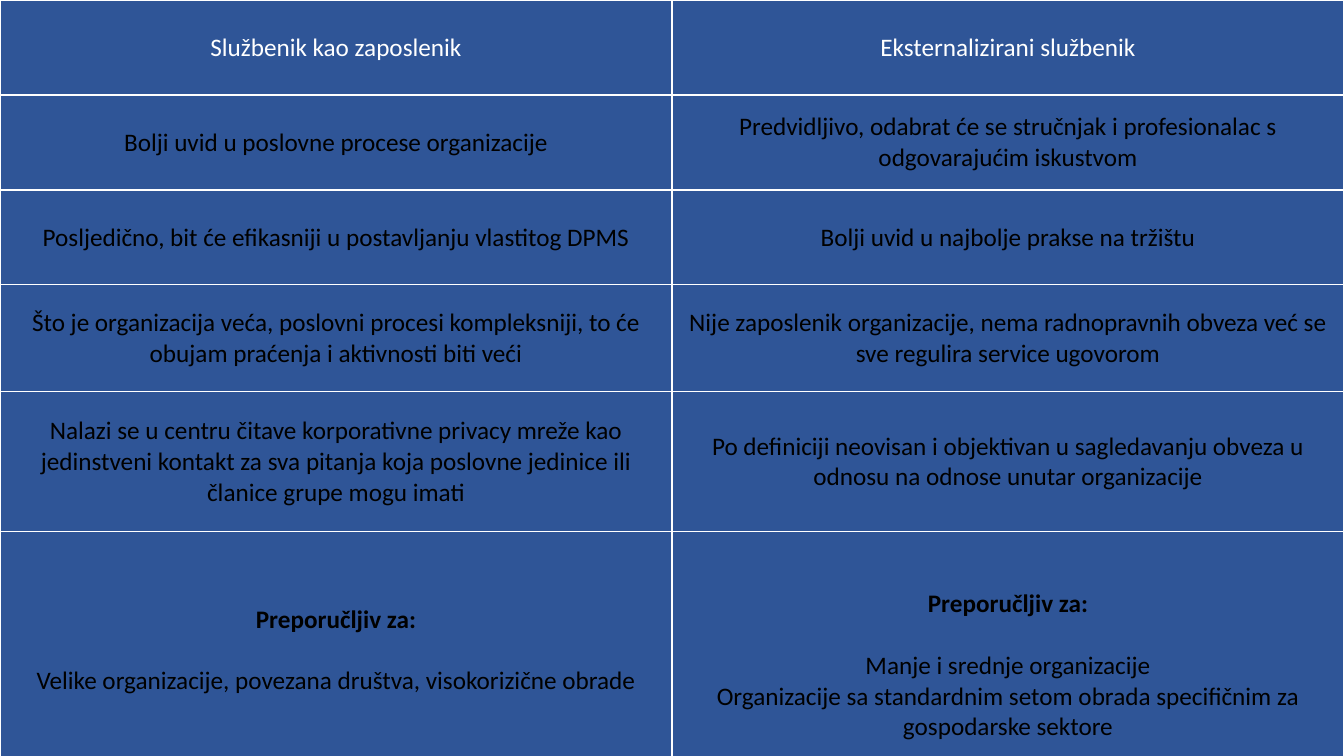
from lxml.etree import SubElement
from pptx import Presentation
from pptx.dml.color import RGBColor
from pptx.enum.text import MSO_ANCHOR, PP_ALIGN
from pptx.oxml.ns import qn
from pptx.util import Emu, Pt

SLIDE_SIZE = (1344, 756)
COLUMN_WIDTH = 672
ROW_HEIGHTS = [95, 95, 95, 107, 140, 237]
RECOMMENDED = "Preporučljiv za:"
COMPARISON = [
    (["Službenik kao zaposlenik"], ["Eksternalizirani službenik"]),
    (["Bolji uvid u poslovne procese organizacije"],
     ["Predvidljivo, odabrat će se stručnjak i profesionalac s odgovarajućim iskustvom"]),
    (["Posljedično, bit će efikasniji u postavljanju vlastitog DPMS"],
     ["Bolji uvid u najbolje prakse na tržištu"]),
    (["Što je organizacija veća, poslovni procesi kompleksniji, to će obujam praćenja i aktivnosti biti veći"],
     ["Nije zaposlenik organizacije, nema radnopravnih obveza već se sve regulira service ugovorom"]),
    (["Nalazi se u centru čitave korporativne privacy mreže kao jedinstveni kontakt za sva pitanja "
      "koja poslovne jedinice ili članice grupe mogu imati"],
     ["Po definiciji neovisan i objektivan u sagledavanju obveza u odnosu na odnose unutar organizacije"]),
    ([RECOMMENDED, "Velike organizacije, povezana društva, visokorizične obrade"],
     [RECOMMENDED, "Manje i srednje organizacije",
      "Organizacije sa standardnim setom obrada specifičnim za gospodarske sektore"]),
]
TOP_MARGINS = {(5, 1): 36}
BLUE, WHITE, BLACK = "2F5597", "FFFFFF", "000000"


def px(length):
    return Emu(round(length * 914400 / 100.8))


def rgb(value):
    return RGBColor.from_string(value)


def write(paragraph, text, color=BLACK, bold=False, gap=0):
    paragraph.text = text
    paragraph.alignment = PP_ALIGN.CENTER
    paragraph.space_before = Pt(gap)
    font = paragraph.runs[0].font
    font.name, font.size, font.bold = "Calibri", Pt(18), bold
    font.color.rgb = rgb(color)


def outline(cell, color, points):
    properties = cell._tc.get_or_add_tcPr()
    for position, side in enumerate(("lnL", "lnR", "lnT", "lnB")):
        line = SubElement(properties, qn(f"a:{side}"), w=str(Pt(points)))
        SubElement(SubElement(line, qn("a:solidFill")), qn("a:srgbClr"), val=color)
        properties.insert(position, line)


def main():
    """Build the slide comparing an employed and an outsourced officer."""
    deck = Presentation()
    deck.slide_width, deck.slide_height = map(px, SLIDE_SIZE)
    slide = deck.slides.add_slide(deck.slide_layouts[6])
    table = slide.shapes.add_table(len(COMPARISON), 2, 0, 0, px(2 * COLUMN_WIDTH), px(sum(ROW_HEIGHTS))).table
    for column in table.columns:
        column.width = px(COLUMN_WIDTH)
    for row, (height, arguments) in enumerate(zip(ROW_HEIGHTS, COMPARISON)):
        table.rows[row].height = px(height)
        for column, statements in enumerate(arguments):
            cell = table.cell(row, column)
            cell.fill.solid()
            cell.fill.fore_color.rgb = rgb(BLUE)
            outline(cell, WHITE, 1)
            cell.vertical_anchor = MSO_ANCHOR.MIDDLE
            if (row, column) in TOP_MARGINS:
                cell.margin_top = px(TOP_MARGINS[row, column])
            frame = cell.text_frame
            for index, statement in enumerate(statements):
                write(frame.add_paragraph() if index else frame.paragraphs[0], statement,
                      color=BLACK if row else WHITE, bold=statement == RECOMMENDED,
                      gap=22 if index == 1 else 0)
    deck.save("out.pptx")


if __name__ == "__main__":
    main()
